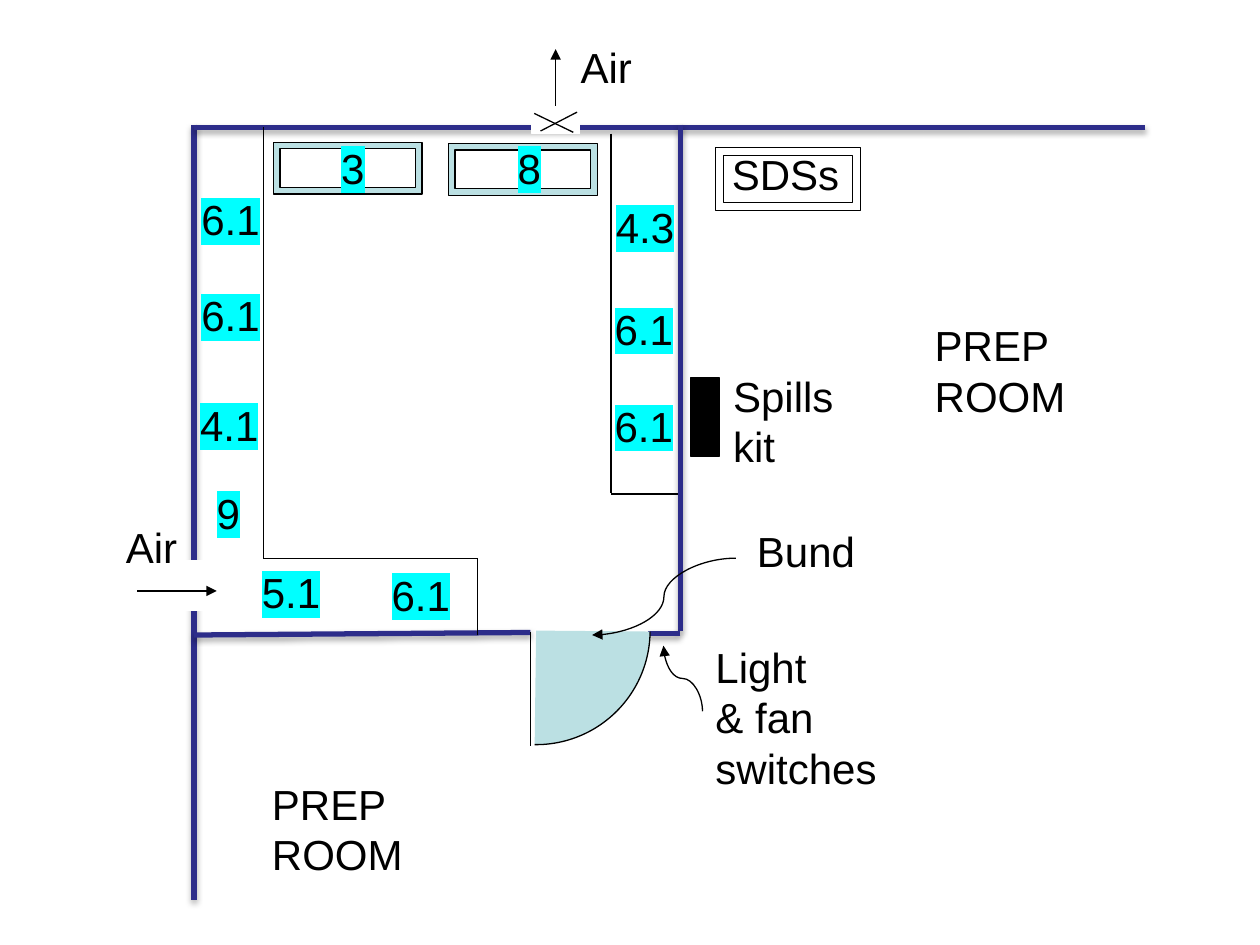
from lxml import etree
from pptx import Presentation, util as u
from pptx.dml.color import RGBColor
from pptx.enum import shapes, text
from pptx.oxml import parse_xml
from pptx.oxml.ns import nsdecls, qn

THEME = dict(wall="2D2D8A", ink="000000", tint="BBE0E3", paper="FFFFFF", mark="00FFFF",
             font="Arial", size=24, thick=3, thin=0.75)
COLS, ROWS = 10, 7.5

prs = Presentation()
prs.slide_width, prs.slide_height = u.Inches(COLS), u.Inches(ROWS)
CELL = prs.slide_width / COLS
s = prs.slides.add_slide(prs.slide_layouts[6])


def add_line(ends, color="ink", width="thin", arrow=False, shadow=False,
             kind=shapes.MSO_CONNECTOR.STRAIGHT):
    c = s.shapes.add_connector(kind, *(int(v * CELL) for v in ends))
    c.line.color.rgb = RGBColor.from_string(THEME[color])
    c.line.width = u.Pt(THEME[width])
    if arrow:
        etree.SubElement(c.line._get_or_add_ln(), qn("a:tailEnd"), type="triangle")
    glow = ('<a:outerShdw blurRad="40000" dist="23000" dir="5400000" rotWithShape="0">'
            '<a:srgbClr val="000000"><a:alpha val="35000"/></a:srgbClr></a:outerShdw>')
    c._element.spPr.append(parse_xml(
        f'<a:effectLst {nsdecls("a")}>{glow if shadow else ""}</a:effectLst>'))
    return c


def add_label(words, left, top, width, height=0.5, marked=False):
    tf = s.shapes.add_textbox(*(int(v * CELL) for v in (left, top, width, height))).text_frame
    tf.text = words
    tf.word_wrap = width > 0.75
    tf.auto_size = text.MSO_AUTO_SIZE.SHAPE_TO_FIT_TEXT
    for r in (r for p in tf.paragraphs for r in p.runs):
        for key, value in dict(name=THEME["font"], size=u.Pt(THEME["size"])).items():
            setattr(r.font, key, value)
        r.font.color.rgb = RGBColor.from_string(THEME["ink"])
        if marked:
            r.font._element.find(qn("a:latin")).addprevious(parse_xml(
                f'<a:highlight {nsdecls("a")}><a:srgbClr val="{THEME["mark"]}"/></a:highlight>'))


# Walls of the store, running on into the prep room
left, right, top, floor = 1.54, 5.4, 1.01, 5.03
for ends in [(left, 0.99, left, 7.14), (9.09, top, left, top), (right, 0.99, right, 5.01),
             (4.21, 5.02, left, 5.04), (right, floor, 5.14, floor)]:
    add_line(ends, "wall", "thick", shadow=True)

# Door leaf and shelf edges
shelf, bench, end, side = 2.09, 4.43, 3.79, 4.85
for ends in [(4.21, 5.02, 4.21, 5.92), (shelf, top, shelf, bench), (side, 1.06, side, 3.91),
             (end, bench, end, 5.04), (shelf, bench, end, bench), (side, 3.92, 5.38, 3.92)]:
    add_line(ends)

# Door swing, cabinets, wall openings, spills kit and SDS holder
AUTO = shapes.MSO_SHAPE
for kind, box, fill, edge in [
    (AUTO.ARC, (3.35, 4.1, 1.81, 1.81), "tint", "ink"),
    (AUTO.FRAME, (2.17, 1.13, 1.18, 0.41), "tint", "ink"),
    (AUTO.FRAME, (3.56, 1.14, 1.18, 0.41), "tint", "ink"),
    (AUTO.FLOWCHART_PROCESS, (1.39, 4.45, 0.31, 0.39), "paper", "paper"),
    (AUTO.FLOWCHART_PROCESS, (4.22, 0.61, 0.38, 0.45), "paper", "paper"),
    (AUTO.RECTANGLE, (5.48, 3, 0.23, 0.62), "ink", "ink"),
    (AUTO.FRAME, (5.68, 1.17, 1.15, 0.5), "paper", "ink"),
]:
    sp = s.shapes.add_shape(kind, *(int(v * CELL) for v in box))
    sp.shadow.inherit = False
    sp.fill.solid()
    sp.fill.fore_color.rgb = RGBColor.from_string(THEME[fill])
    sp.line.color.rgb = RGBColor.from_string(THEME[edge])
    sp.line.width = u.Pt(THEME["thin"])
    if kind == AUTO.ARC:
        sp.adjustments[0], sp.adjustments[1] = 0.28, 54.43

# Air flow and the fan cross
for ends in [(1.09, 4.69, 1.72, 4.69), (4.41, 0.84, 4.41, 0.39)]:
    add_line(ends, arrow=True)
for ends in [(4.24, 0.9, 4.55, 1.05), (4.29, 1.04, 4.58, 0.89)]:
    add_line(ends)

# Curved pointers to the switches and the bund
CURVE = shapes.MSO_CONNECTOR.CURVE
switch_pointer = add_line((5.16, 5.54, 5.68, 5.23), arrow=True, kind=CURVE)
switch_pointer._element.spPr.find(qn("a:xfrm")).set("rot", str(270 * 60000))
add_line((5.84, 4.43, 4.7, 5.04), arrow=True, kind=CURVE)

# Hazard classes
for words, x, y in [("3", 2.61, 1.08), ("8", 4.01, 1.08), ("9", 1.62, 3.82),
                    ("6.1", 1.5, 1.49), ("6.1", 1.5, 2.25), ("4.1", 1.49, 3.12),
                    ("4.3", 4.79, 1.55), ("6.1", 4.78, 2.36), ("6.1", 4.78, 3.13),
                    ("5.1", 1.98, 4.45), ("6.1", 3.01, 4.47)]:
    add_label(words, x, y, 0.39 if len(words) == 1 else 0.7, marked=True)

# Room and equipment names
for label in [("Air", 0.9, 4.09, 0.61), ("Air", 4.51, 0.28, 0.61), ("SDSs", 5.71, 1.13, 1.13),
              ("Bund", 5.91, 4.12, 1.06), ("Spills kit", 5.72, 2.89, 1.06, 0.91),
              ("Light\n& fan\nswitches", 5.58, 5.04, 1.59, 1.31),
              ("PREP\vROOM", 2.06, 6.13, 1.59, 0.91), ("PREP\vROOM", 7.32, 2.49, 1.59, 0.91)]:
    add_label(*label)

prs.save("out.pptx")
